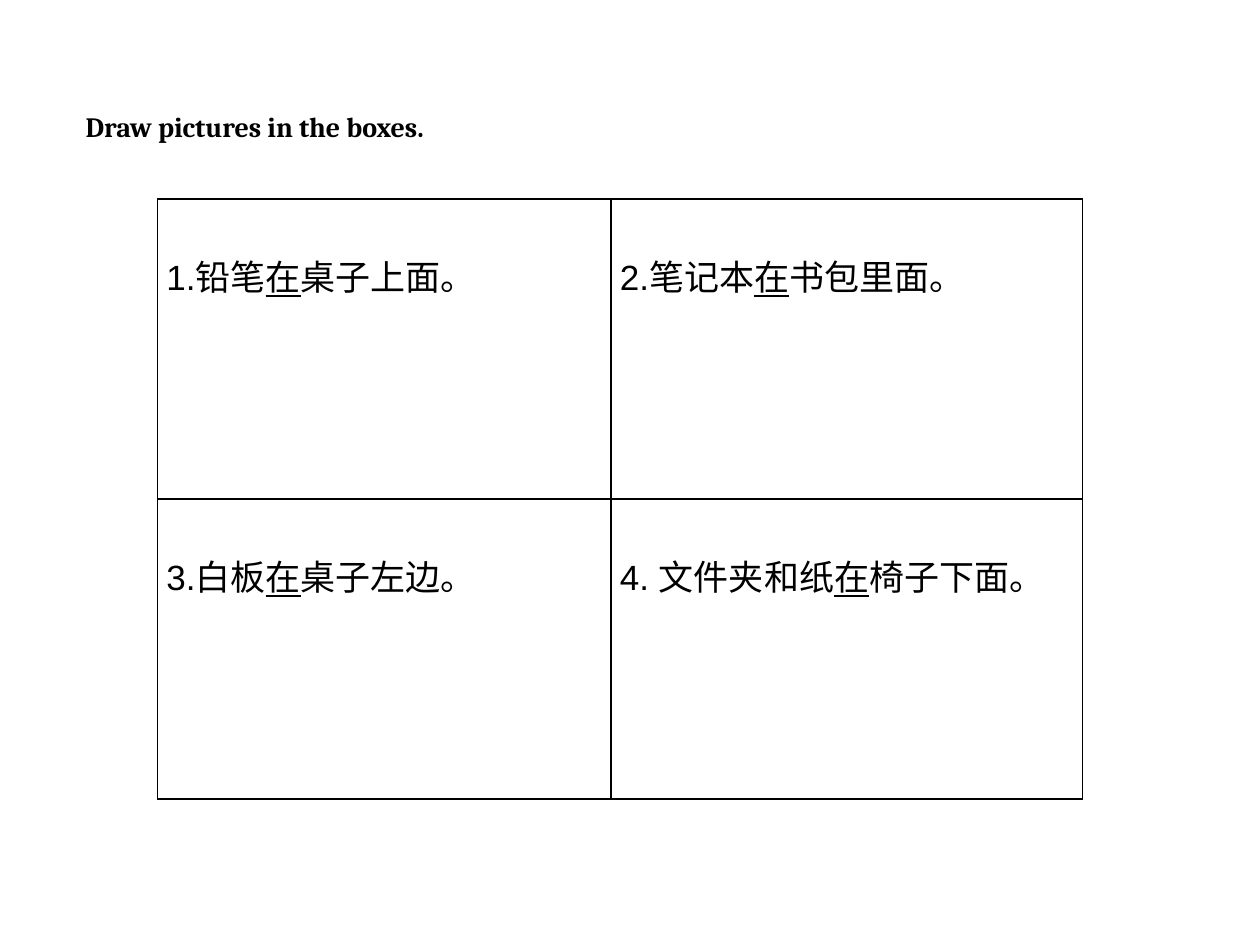
from lxml import etree
from pptx import Presentation
from pptx.dml.color import RGBColor
from pptx.enum.text import MSO_ANCHOR, MSO_AUTO_SIZE, PP_ALIGN
from pptx.oxml.ns import qn
from pptx.util import Inches, Pt

LEFT, TOP, MIDDLE = PP_ALIGN.LEFT, MSO_ANCHOR.TOP, MSO_ANCHOR.MIDDLE
FIT_SHAPE = MSO_AUTO_SIZE.SHAPE_TO_FIT_TEXT
BLACK = RGBColor(0x00, 0x00, 0x00)

COLS = [3.6, 3.74]
ROW_H = 2.38
KEYWORD = "在"
SENTENCES = [
    [("1.铅笔", "桌子上面。"), ("2.笔记本", "书包里面。")],
    [("3.白板", "桌子左边。"), ("4. 文件夹和纸", "椅子下面。")],
]


def add_run(p, text, font, size, bold=False, underline=False):
    r = p.add_run()
    r.text = text
    r.font.name, r.font.size = font, Pt(size)
    r.font.bold, r.font.underline = bold, underline
    r.font.color.rgb = BLACK


def add_borders(cell):
    tcPr = cell._tc.get_or_add_tcPr()
    for i, side in enumerate(("lnL", "lnR", "lnT", "lnB")):
        ln = etree.Element(qn("a:" + side), w=str(Pt(1)))
        fill = etree.SubElement(ln, qn("a:solidFill"))
        etree.SubElement(fill, qn("a:srgbClr"), val=str(BLACK))
        tcPr.insert(i, ln)


prs = Presentation()
prs.slide_width, prs.slide_height = Inches(10), Inches(7.5)
s = prs.slides.add_slide(prs.slide_layouts.get_by_name("Title Only"))

# Instruction
title = s.shapes.title
title.left, title.top = Inches(0.58), Inches(0.75)
title.width, title.height = prs.slide_width, Inches(0.5)
tf = title.text_frame
tf.word_wrap, tf.auto_size, tf.vertical_anchor = False, FIT_SHAPE, MIDDLE
p = tf.paragraphs[0]
p.alignment = LEFT
add_run(p, "Draw pictures in the boxes.", "Cambria", 16, bold=True)

# Drawing boxes
rows = len(SENTENCES)
table = s.shapes.add_table(rows, len(COLS), Inches(1.25), Inches(1.58),
                           Inches(sum(COLS)), Inches(rows * ROW_H)).table
table.first_row = table.horz_banding = False
for col, width in zip(table.columns, COLS):
    col.width = Inches(width)

for i, sentences in enumerate(SENTENCES):
    table.rows[i].height = Inches(ROW_H)
    for j, (before, after) in enumerate(sentences):
        cell = table.cell(i, j)
        cell.fill.background()
        cell.vertical_anchor = TOP
        cell.margin_left = cell.margin_right = Inches(0.07)
        cell.margin_top = cell.margin_bottom = 0
        add_borders(cell)
        p = cell.text_frame.paragraphs[0]
        p.line_spacing = 2.0
        for text in (before, KEYWORD, after):
            add_run(p, text, "Arial", 20, underline=text == KEYWORD)

prs.save("out.pptx")
